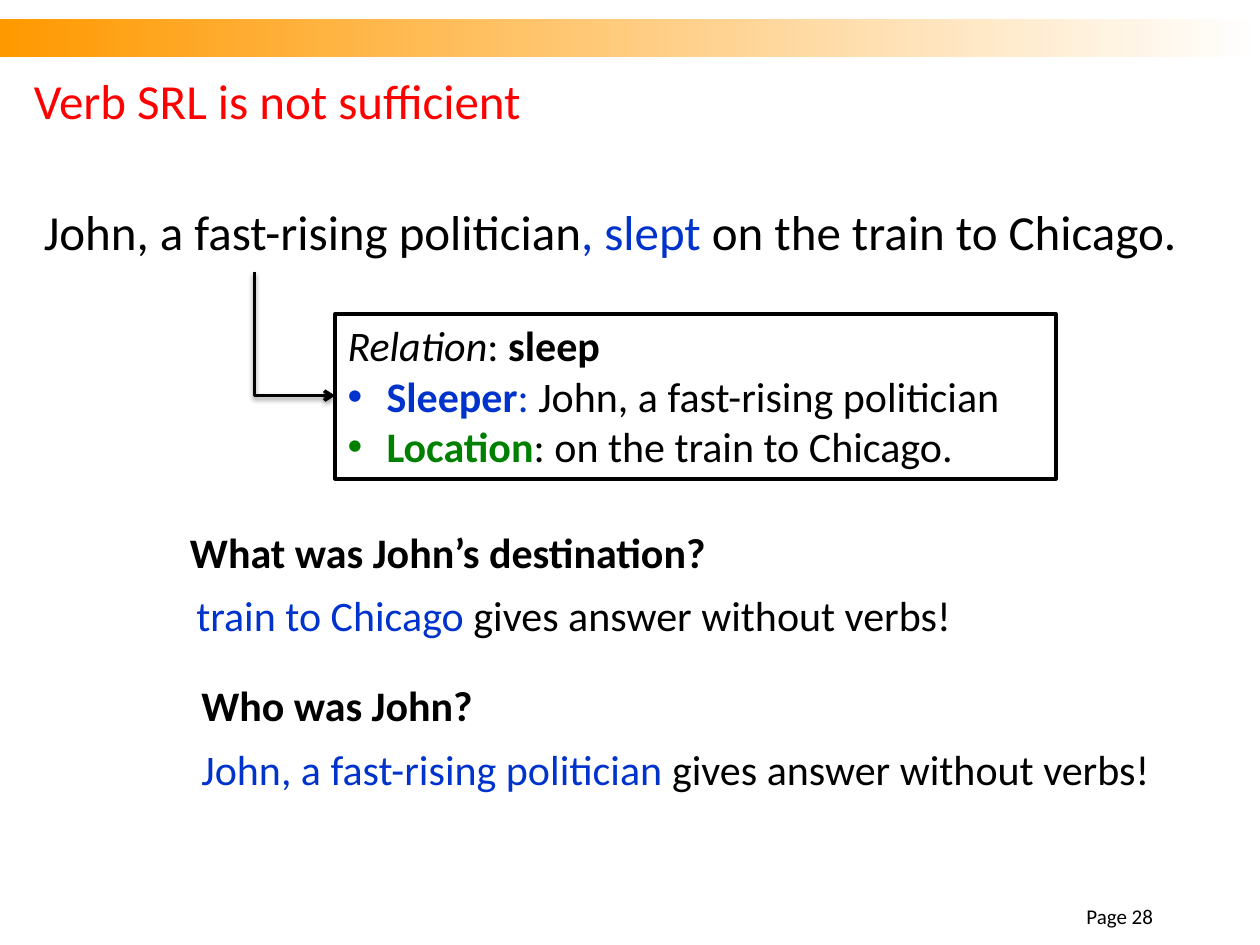
import pptx
import pptx.dml.color
import pptx.enum.shapes
import pptx.enum.text
import pptx.oxml
import pptx.oxml.ns
import pptx.util

Inches = pptx.util.Inches
Pt = pptx.util.Pt
Anchor = pptx.enum.text.MSO_ANCHOR
Align = pptx.enum.text.PP_ALIGN

COLORS = {
    "black": "000000",
    "white": "FFFFFF",
    "orange": "FF9900",
    "red": "FF0000",
    "blue": "0033CC",
    "green": "008000",
}
NAMESPACE = pptx.oxml.ns.nsdecls("a")


def rgb(name):
    return pptx.dml.color.RGBColor.from_string(COLORS[name])


class SlideBuilder:
    """Holds the style and the current slide."""

    font = "Calibri"
    line_width = Pt(2)
    bullet_indent = Inches(0.31)

    def __init__(self, page):
        self.shapes = page.shapes

    def rectangle(self, left, top, width, height):
        box = self.shapes.add_shape(
            pptx.enum.shapes.MSO_SHAPE.RECTANGLE,
            Inches(left), Inches(top), Inches(width), Inches(height))
        box.shadow.inherit = False
        return box

    def gradient_band(self, left, top, width, height, start, end):
        band = self.rectangle(left, top, width, height)
        band.line.fill.background()
        band.fill.gradient()
        band.fill.gradient_angle = 0
        for stop, color in zip(band.fill.gradient_stops, (start, end)):
            stop.color.rgb = rgb(color)

    def text(self, left, top, width, height, spans, size=24,
             anchor=Anchor.TOP, align=Align.LEFT):
        box = self.shapes.add_textbox(
            Inches(left), Inches(top), Inches(width), Inches(height))
        box.text_frame.word_wrap = True
        box.text_frame.vertical_anchor = anchor
        self.fill_paragraph(box.text_frame.paragraphs[0], spans, size, align)

    def framed_list(self, left, top, width, height, heading, items, size=24):
        box = self.rectangle(left, top, width, height)
        box.fill.solid()
        box.fill.fore_color.rgb = rgb("white")
        box.line.color.rgb = rgb("black")
        box.line.width = self.line_width
        frame = box.text_frame
        frame.word_wrap = True
        frame.vertical_anchor = Anchor.TOP
        self.fill_paragraph(frame.paragraphs[0], heading, size)
        for spans in items:
            para = frame.add_paragraph()
            self.bullet(para, spans[0][1])
            self.fill_paragraph(para, spans, size)

    def bullet(self, para, color):
        properties = para._p.get_or_add_pPr()
        properties.set("marL", str(self.bullet_indent))
        properties.set("indent", str(-self.bullet_indent))
        for tag in (f'buClr {NAMESPACE}><a:srgbClr val="{COLORS[color]}"/></a:buClr',
                    f'buFont {NAMESPACE} typeface="Arial"/',
                    f'buChar {NAMESPACE} char="•"/'):
            properties.append(pptx.oxml.parse_xml(f"<a:{tag}>"))

    def fill_paragraph(self, para, spans, size, align=Align.LEFT):
        """Each span is (words, color) or (words, color, style letter)."""
        para.alignment = align
        para.font.name = self.font
        para.font.size = Pt(size)
        for words, color, *style in spans:
            span = para.add_run()
            span.text = words
            span.font.color.rgb = rgb(color)
            if "b" in style:
                span.font.bold = True
            if "i" in style:
                span.font.italic = True

    def elbow_arrow(self, start_x, start_y, end_x, end_y):
        """Goes down from the start, then right to the end."""
        # The one-bend preset runs sideways first, so it is flipped and turned
        center_x, center_y = (start_x + end_x) / 2, (start_y + end_y) / 2
        half_width, half_height = (end_y - start_y) / 2, (end_x - start_x) / 2
        arrow = self.shapes.add_connector(
            pptx.enum.shapes.MSO_CONNECTOR.ELBOW,
            Inches(center_x + half_width), Inches(center_y - half_height),
            Inches(center_x - half_width), Inches(center_y + half_height))
        arrow.line.color.rgb = rgb("black")
        arrow.line.width = self.line_width
        properties = arrow._element.spPr
        properties.find(pptx.oxml.ns.qn("a:xfrm")).set("rot", str(270 * 60000))
        properties.find(pptx.oxml.ns.qn("a:prstGeom")).set("prst", "bentConnector2")
        arrow.line._get_or_add_ln().append(
            pptx.oxml.parse_xml(f'<a:tailEnd {NAMESPACE} type="arrow"/>'))
        properties.append(pptx.oxml.parse_xml(
            f'<a:effectLst {NAMESPACE}><a:outerShdw blurRad="{Pt(3.1)}" '
            f'dist="{Pt(1.6)}" dir="5400000" rotWithShape="0">'
            f'<a:srgbClr val="{COLORS["black"]}"><a:alpha val="38000"/></a:srgbClr>'
            '</a:outerShdw></a:effectLst>'))


def main():
    deck = pptx.Presentation()
    deck.slide_width = Inches(10)
    deck.slide_height = Inches(7.5)
    slide = SlideBuilder(deck.slides.add_slide(deck.slide_layouts[6]))

    # Header band and title
    slide.gradient_band(0, 0.15, 10, 0.3, "orange", "white")
    slide.text(0.17, 0.5, 9, 0.58, [("Verb SRL is not sufficient", "red")],
               size=28, anchor=Anchor.MIDDLE)

    # Example sentence
    slide.text(0.25, 1.55, 9.36, 0.57, [
        ("John, a fast-rising politician", "black"),
        (", slept ", "blue"),
        ("on the train to Chicago.", "black")], size=28)

    # Relation found for the verb
    slide.framed_list(
        2.66, 2.49, 5.72, 1.31,
        [("Relation", "black", "i"), (": ", "black"), ("sleep", "black", "b")],
        [[("Sleeper", "blue", "b"), (": ", "blue"),
          ("John, a fast-rising politician", "black")],
         [("Location", "green", "b"), (": on the train to Chicago.", "black")]])
    slide.elbow_arrow(2.02, 2.16, 2.66, 3.14)

    # Questions, each with its answer
    answer_end = ("gives answer without verbs!", "black")
    slide.text(1.41, 4.13, 5.14, 0.5,
               [("What was John’s destination?", "black", "b")])
    slide.text(1.46, 4.63, 6.74, 0.5,
               [("train to Chicago ", "blue"), answer_end])
    slide.text(1.5, 5.34, 5.14, 0.5, [("Who was John?", "black", "b")])
    slide.text(1.5, 5.85, 8.11, 0.5,
               [("John, a fast-rising politician ", "blue"), answer_end])

    # Page number
    slide.text(8.25, 7.17, 1, 0.25, [("Page 28", "black")], size=12,
               anchor=Anchor.BOTTOM, align=Align.RIGHT)

    deck.save("out.pptx")


if __name__ == "__main__":
    main()
